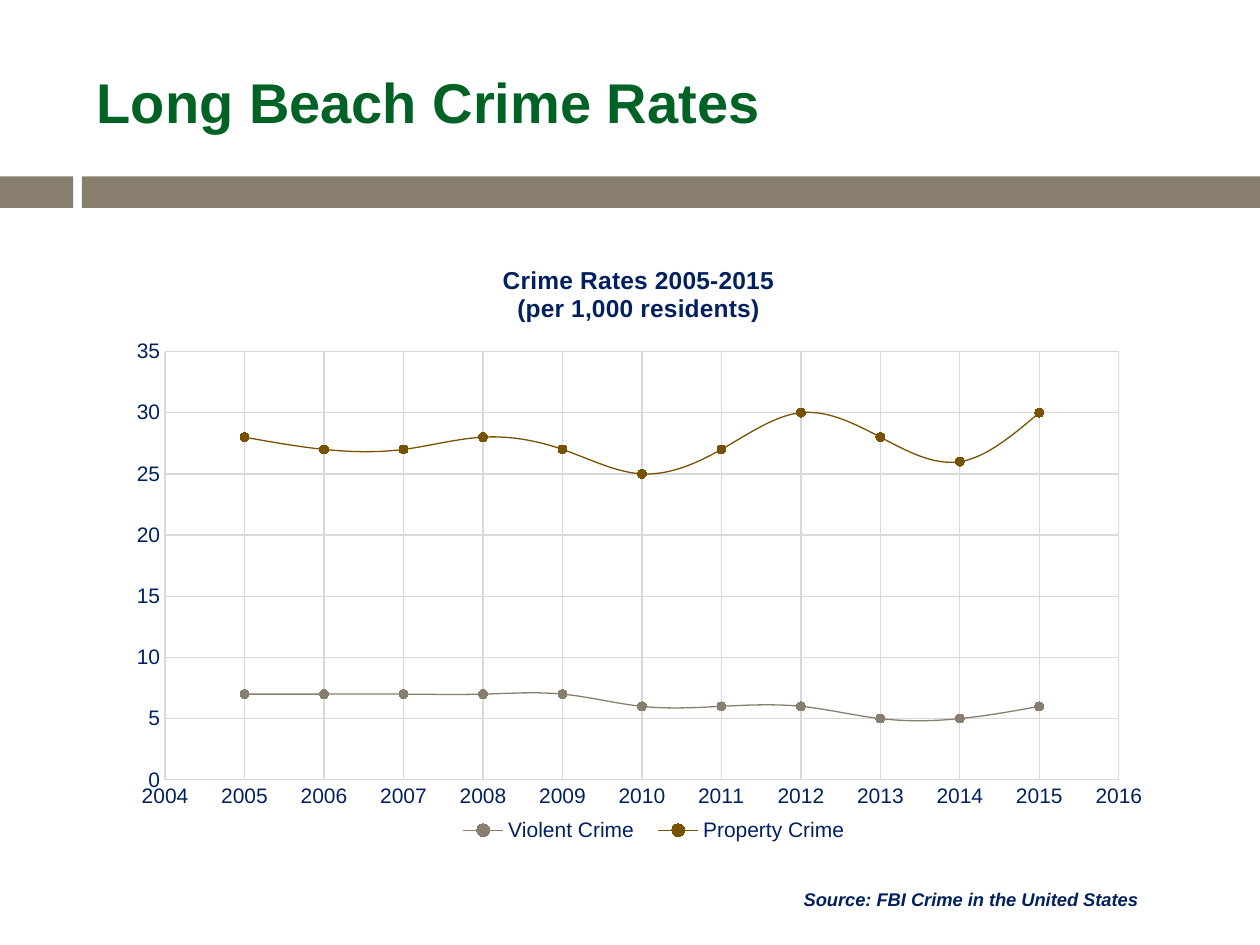
from lxml import etree
from pptx import Presentation
from pptx.chart.data import XyChartData
from pptx.dml.color import RGBColor
from pptx.enum.chart import (XL_CHART_TYPE, XL_LEGEND_POSITION,
                             XL_MARKER_STYLE, XL_TICK_MARK)
from pptx.enum.shapes import MSO_SHAPE
from pptx.enum.text import MSO_ANCHOR
from pptx.oxml.ns import qn
from pptx.util import Inches, Pt

SCATTER = XL_CHART_TYPE.XY_SCATTER_SMOOTH
BOTTOM = XL_LEGEND_POSITION.BOTTOM
CIRCLE = XL_MARKER_STYLE.CIRCLE
NO_TICK = XL_TICK_MARK.NONE
RECT = MSO_SHAPE.RECTANGLE
MIDDLE = MSO_ANCHOR.MIDDLE

GREEN = RGBColor(0x00, 0x62, 0x25)
NAVY = RGBColor(0x00, 0x20, 0x60)
TAUPE = RGBColor(0x88, 0x7E, 0x6E)
BROWN = RGBColor(0x78, 0x52, 0x00)
GRID = RGBColor(0xD9, 0xD9, 0xD9)

# Content
TITLE = "Long Beach Crime Rates"
CHART_TITLE = "Crime Rates 2005-2015\n(per 1,000 residents)"
SOURCE = "Source: FBI Crime in the United States"
YEARS = range(2005, 2016)
SERIES = [
    ("Violent Crime", TAUPE, [7, 7, 7, 7, 7, 6, 6, 6, 5, 5, 6]),
    ("Property Crime", BROWN, [28, 27, 27, 28, 27, 25, 27, 30, 28, 26, 30]),
]

# Places in inches: left, top, width, height
BAND_TOP, BAND_H, BAND_SPLIT = 1.4, 0.25, (0.58, 0.65)
TITLE_AT = (0.67, 0.26, 8.92, 1.08)
CHART_AT = (0.92, 1.92, 8.31, 4.92)
SOURCE_AT = (6.28, 7, 2.9, 0.28)

# Places in inches inside the chart
CHART_TITLE_AT = (3.04, 0.15)
PLOT_AT = (0.39, 0.87, 7.57, 3.4)
LEGEND_AT = (2.62, 4.52, 3.3, 0.3)


def set_font(font, size, color, **extra):
    font.color.rgb = color
    for name, value in {"name": "Arial", "size": Pt(size), **extra}.items():
        setattr(font, name, value)


def set_line(line, color):
    line.color.rgb = color
    line.width = Pt(0.75)


def add_text(slide, at, text, wrap, anchor, **font):
    tf = slide.shapes.add_textbox(*map(Inches, at)).text_frame
    tf.word_wrap = wrap
    tf.vertical_anchor = anchor
    r = tf.paragraphs[0].add_run()
    r.text = text
    set_font(r.font, **font)


def place(part, index, at, inner=False):
    """Give a chart part a manual layout as its child number index."""
    for old in part.findall(qn("c:layout")):
        part.remove(old)
    layout = etree.Element(qn("c:layout"))
    manual = etree.SubElement(layout, qn("c:manualLayout"))
    items = [("layoutTarget", "inner")] if inner else []
    items += [(f"{axis}Mode", "edge") for axis in "xy"]
    width, height = CHART_AT[2:]
    items += [(tag, length / full) for tag, length, full
              in zip("xywh", at, (width, height) * 2)]
    for tag, value in items:
        etree.SubElement(manual, qn(f"c:{tag}")).set("val", str(value))
    part.insert(index, layout)


prs = Presentation()
prs.slide_width, prs.slide_height = Inches(10), Inches(7.5)
s = prs.slides.add_slide(prs.slide_layouts[6])

# Two-part band
for left, right in ((0, BAND_SPLIT[0]), (BAND_SPLIT[1], 10)):
    sp = s.shapes.add_shape(
        RECT, *map(Inches, (left, BAND_TOP, right - left, BAND_H)))
    sp.shadow.inherit = False
    sp.fill.solid()
    sp.fill.fore_color.rgb = TAUPE
    sp.line.fill.background()

# Title
add_text(s, TITLE_AT, TITLE, True, MIDDLE, size=32, color=GREEN, bold=True)

# Chart data
data = XyChartData()
for name, _, rates in SERIES:
    series = data.add_series(name)
    for year, rate in zip(YEARS, rates):
        series.add_data_point(year, rate)
chart = s.shapes.add_chart(SCATTER, *map(Inches, CHART_AT), data).chart
set_font(chart.font, 12, NAVY)

# Chart title
tf = chart.chart_title.text_frame
tf.text = CHART_TITLE
for p in tf.paragraphs:
    for r in p.runs:
        set_font(r.font, 14, NAVY, bold=True)

# Axes
for axis, low, high, step in ((chart.category_axis, 2004, 2016, 1),
                              (chart.value_axis, 0, 35, 5)):
    for key, value in {"minimum_scale": low, "maximum_scale": high,
                       "major_unit": step, "major_tick_mark": NO_TICK,
                       "minor_tick_mark": NO_TICK,
                       "has_major_gridlines": True}.items():
        setattr(axis, key, value)
    axis.tick_labels.number_format = "0"
    axis.tick_labels.number_format_is_linked = False
    set_font(axis.tick_labels.font, 12, NAVY)
    set_line(axis.format.line, GRID)
    set_line(axis.major_gridlines.format.line, GRID)

# Series
root = chart.element
for series, (_, color, _) in zip(chart.plots[0].series, SERIES):
    set_line(series.format.line, color)
    marker = series.marker
    marker.style, marker.size = CIRCLE, 5
    marker.format.fill.solid()
    marker.format.fill.fore_color.rgb = color
    set_line(marker.format.line, color)
for ser in root.findall(".//" + qn("c:ser")):
    smooth = ser.find(qn("c:smooth"))
    if smooth is None:
        smooth = etree.SubElement(ser, qn("c:smooth"))
    smooth.set("val", "1")

# Legend
chart.has_legend = True
legend = chart.legend
legend.position = BOTTOM
legend.include_in_layout = False
set_font(legend.font, 12, NAVY)

# Chart layout
place(root.find(".//" + qn("c:title")), 1, CHART_TITLE_AT)
place(root.find(".//" + qn("c:plotArea")), 0, PLOT_AT, inner=True)
place(root.find(".//" + qn("c:legend")), 1, LEGEND_AT)

# Source note
add_text(s, SOURCE_AT, SOURCE, False, None,
         size=10.5, color=NAVY, bold=True, italic=True)

prs.save("out.pptx")
